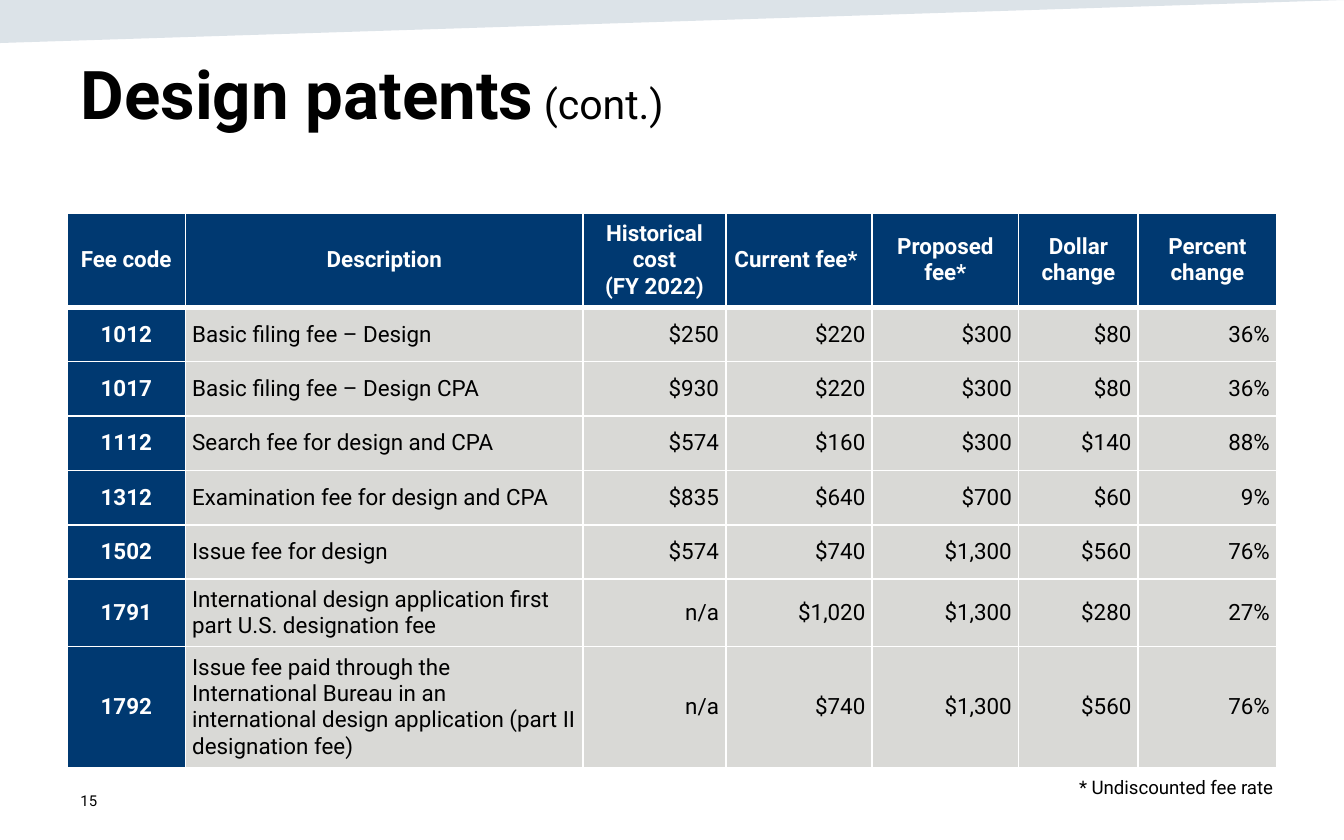
from lxml import etree
from pptx import Presentation
from pptx.dml.color import RGBColor
from pptx.enum.text import MSO_ANCHOR, PP_ALIGN
from pptx.oxml.ns import qn
from pptx.util import Pt

LEFT, CENTER, RIGHT = PP_ALIGN.LEFT, PP_ALIGN.CENTER, PP_ALIGN.RIGHT
TOP, MIDDLE = MSO_ANCHOR.TOP, MSO_ANCHOR.MIDDLE

PX = 4572  # EMU per px, 200 px to the inch
FONT = "Roboto"
COLORS = {
    "navy": "003971",
    "gray": "D9D9D6",
    "band": "164469",
    "white": "FFFFFF",
    "black": "000000",
}

COL_WIDTHS = [176, 592, 212, 218, 218, 178, 206]
ROW_HEIGHTS = [136] + [81] * 5 + [98, 176]
COL_ALIGNS = [CENTER, LEFT] + [RIGHT] * 5
FEES = [
    ["Fee code", "Description", "Historical cost\n(FY 2022)", "Current fee* ",
     "Proposed fee*", "Dollar change", "Percent change"],
    ["1012", "Basic filing fee – Design", "$250", "$220", "$300", "$80", "36%"],
    ["1017", "Basic filing fee – Design CPA", "$930", "$220", "$300", "$80", "36%"],
    ["1112", "Search fee for design and CPA", "$574", "$160", "$300", "$140", "88%"],
    ["1312", "Examination fee for design and CPA", "$835", "$640", "$700", "$60", "9%"],
    ["1502", "Issue fee for design", "$574", "$740", "$1,300", "$560", "76%"],
    ["1791", "International design application first part U.S. designation fee",
     "n/a", "$1,020", "$1,300", "$280", "27%"],
    ["1792", "Issue fee paid through the International Bureau in an international "
     "design application (part II designation fee)",
     "n/a", "$740", "$1,300", "$560", "76%"],
]


def px(n):
    return int(n * PX)


def rgb(name):
    return RGBColor.from_string(COLORS[name])


def add_run(p, text, size=12, color="black", bold=False):
    r = p.add_run()
    r.text = text
    r.font.name = FONT
    r.font.size = Pt(size)
    r.font.bold = bold
    r.font.color.rgb = rgb(color)


def write(tf, text, align=LEFT, **fmt):
    """Fill a text frame, one paragraph for each line of text."""
    tf.word_wrap = True
    for i, line in enumerate(text.split("\n")):
        p = tf.add_paragraph() if i else tf.paragraphs[0]
        p.alignment = align
        add_run(p, line, **fmt)


def set_borders(cell, bottom=1, top=1):
    """Draw white cell borders; widths are in points."""
    tcPr = cell._tc.get_or_add_tcPr()
    for tag, width in (("a:lnL", 1), ("a:lnR", 1), ("a:lnT", top), ("a:lnB", bottom)):
        ln = etree.SubElement(tcPr, qn(tag), w=str(Pt(width)))
        fill = etree.SubElement(ln, qn("a:solidFill"))
        etree.SubElement(fill, qn("a:srgbClr"), val=COLORS["white"])


class Deck:
    """Holds the presentation and the current slide."""

    def __init__(self, width, height):
        self.prs = Presentation()
        self.prs.slide_width, self.prs.slide_height = px(width), px(height)
        self.s = self.prs.slides.add_slide(self.prs.slide_layouts[5])

    def band(self, points, color, opacity):
        """Draw a translucent polygon behind everything else."""
        fb = self.s.shapes.build_freeform(*points[0], scale=PX)
        fb.add_line_segments(points[1:], close=True)
        sp = fb.convert_to_shape()
        sp.shadow.inherit = False
        sp.line.fill.background()
        sp.fill.solid()
        sp.fill.fore_color.rgb = rgb(color)
        clr = sp._element.spPr.find(".//" + qn("a:srgbClr"))
        etree.SubElement(clr, qn("a:alpha"), val=str(opacity * 1000))
        self.s.shapes._spTree.insert(2, sp._element)

    def title(self, x, y, w, h, runs):
        sp = self.s.shapes.title
        sp.left, sp.top, sp.width, sp.height = map(px, (x, y, w, h))
        tf = sp.text_frame
        tf.vertical_anchor = TOP
        p = tf.paragraphs[0]
        p.alignment = LEFT
        for text, size, bold in runs:
            add_run(p, text, size=size, bold=bold)

    def text(self, x, y, w, h, text, anchor=TOP, **fmt):
        tf = self.s.shapes.add_textbox(*map(px, (x, y, w, h))).text_frame
        tf.vertical_anchor = anchor
        write(tf, text, **fmt)

    def table(self, x, y, rows, widths, heights, aligns):
        frame = self.s.shapes.add_table(
            len(rows), len(widths), *map(px, (x, y, sum(widths), sum(heights))))
        tbl = frame.table
        tbl.horz_banding = False
        for col, w in zip(tbl.columns, widths):
            col.width = px(w)
        for i, (row, h) in enumerate(zip(rows, heights)):
            tbl.rows[i].height = px(h)
            for j, text in enumerate(row):
                self.cell(tbl.cell(i, j), text, CENTER if i == 0 else aligns[j],
                          head=i == 0 or j == 0,
                          top=3 if i == 1 else 1, bottom=3 if i == 0 else 1)

    def cell(self, cell, text, align, head, top, bottom):
        set_borders(cell, top=top, bottom=bottom)
        cell.fill.solid()
        cell.fill.fore_color.rgb = rgb("navy" if head else "gray")
        cell.vertical_anchor = MIDDLE
        cell.margin_left = cell.margin_right = px(10)
        cell.margin_top = cell.margin_bottom = px(10)
        write(cell.text_frame, text, align=align, bold=head,
              color="white" if head else "black")


def main():
    deck = Deck(2000, 1250)
    deck.band([(0, 0), (0, 64), (2000, 0)], "band", 15)
    deck.text(100, 1158, 450, 66, "15", anchor=MIDDLE, size=8)
    deck.title(100, 68, 1800, 208, [
        ("Design patents", 36, True), (" ", 22, True), ("(cont.)", 22, False)])
    deck.table(100, 317, FEES, COL_WIDTHS, ROW_HEIGHTS, COL_ALIGNS)
    deck.text(1514, 1144, 400, 54, "* Undiscounted fee rate", align=RIGHT, size=10)
    deck.prs.save("out.pptx")


if __name__ == "__main__":
    main()
